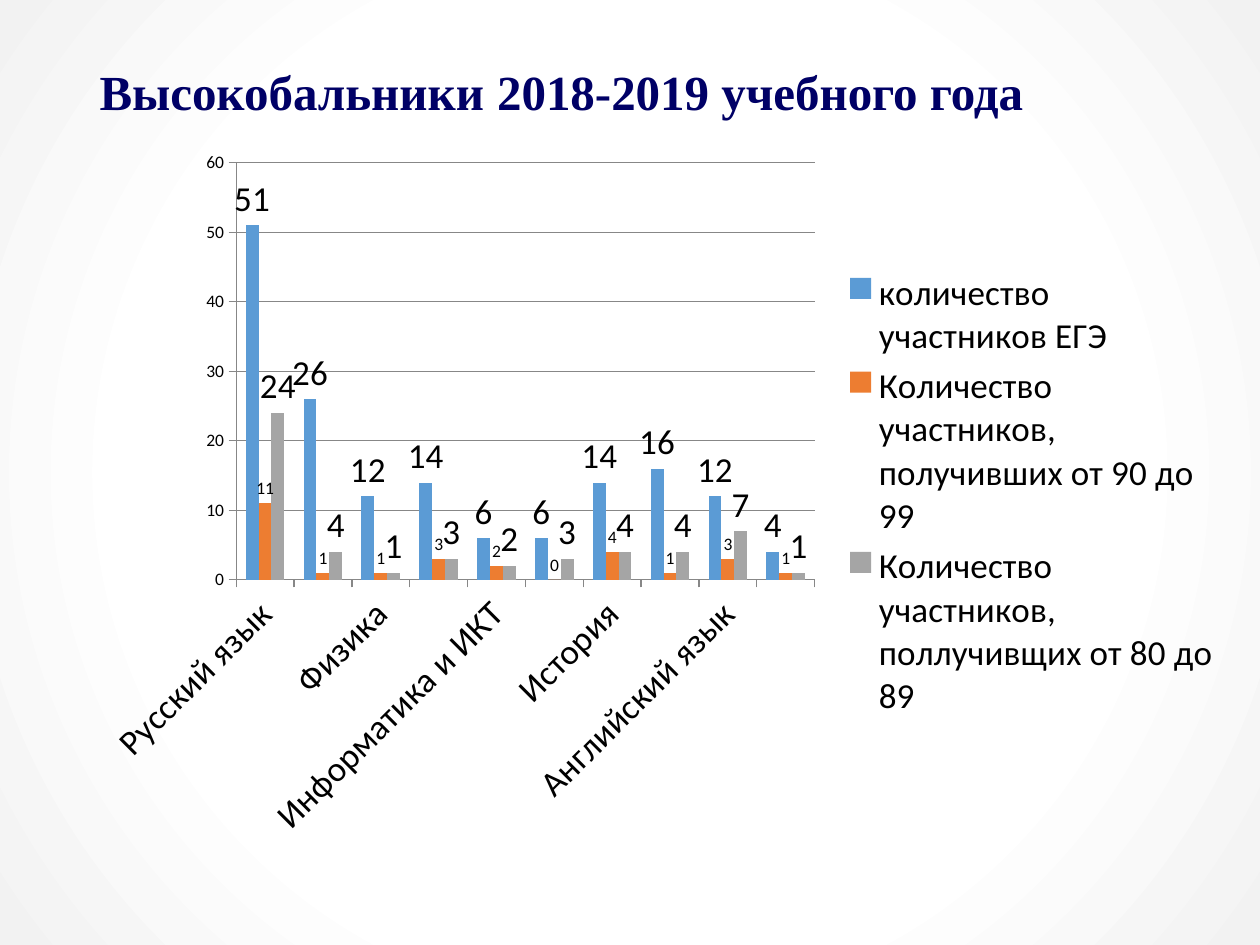
import pptx
import pptx.chart.data
import pptx.dml.color
import pptx.enum.chart
import pptx.enum.shapes
import pptx.enum.text
import pptx.oxml
import pptx.oxml.ns
import pptx.util
from pptx.util import Inches

TITLE_RUNS = [
    ("Высокобальники", 28, "Times New Roman", "000066", True),
    (" ", 33, "Calibri", "000000", False),
    ("2018-2019 учебного года", 28, "Times New Roman", "000066", True),
]
SUBJECTS = [
    "Русский язык", "Математика (профильная)", "Физика", "Химия",
    "Информатика и ИКТ", "Биология", "История", "Обществознание",
    "Английский язык", "Литература",
]
SERIES = [
    ("количество участников ЕГЭ",
     (51, 26, 12, 14, 6, 6, 14, 16, 12, 4), "5B9BD5", 20),
    ("Количество участников, получивших от 90 до 99",
     (11, 1, 1, 3, 2, 0, 4, 1, 3, 1), "ED7D31", 10),
    ("Количество участников, поллучивщих от 80 до 89",
     (24, 4, 1, 3, 2, 3, 4, 4, 7, 1), "A5A5A5", 20),
]
GRADIENT = (
    '<a:gradFill %s rotWithShape="1"><a:gsLst>'
    '<a:gs pos="63000"><a:srgbClr val="FFFFFF"/></a:gs>'
    '<a:gs pos="100000"><a:srgbClr val="F2F2F2"/></a:gs></a:gsLst>'
    '<a:path path="circle"><a:fillToRect l="50000" t="50000" r="50000" b="50000"/>'
    '</a:path></a:gradFill>' % pptx.oxml.ns.nsdecls("a")
)
PLOT_LAYOUT = (
    '<c:layout %s><c:manualLayout><c:layoutTarget val="inner"/>'
    '<c:xMode val="edge"/><c:yMode val="edge"/>'
    '<c:x val="0.13"/><c:y val="0.034"/><c:w val="0.504"/><c:h val="0.586"/>'
    '</c:manualLayout></c:layout>' % pptx.oxml.ns.nsdecls("c")
)


def paint(color_format, value):
    color_format.rgb = pptx.dml.color.RGBColor.from_string(value)


def style_font(font, size, name="Calibri", color="000000", bold=False):
    font.size = pptx.util.Pt(size)
    font.name = name
    font.bold = bold
    font.fill.solid()
    paint(font.fill.fore_color, color)


def style_line(line, color="878787"):
    line.fill.solid()
    paint(line.color, color)
    line.width = pptx.util.Pt(0.75)


def add_backdrop(page, deck):
    backdrop = page.shapes.add_shape(
        pptx.enum.shapes.MSO_SHAPE.RECTANGLE, 0, 0, deck.slide_width, deck.slide_height)
    backdrop.shadow.inherit = False
    backdrop.line.fill.background()
    backdrop.fill.background()
    properties = backdrop.element.spPr
    no_fill = properties.find(pptx.oxml.ns.qn("a:noFill"))
    properties.replace(no_fill, pptx.oxml.parse_xml(GRADIENT))
    page.shapes.element.insert(2, backdrop.element)


def add_title(page):
    title = page.shapes.title
    title.left, title.top = Inches(0.69), Inches(0.4)
    title.width, title.height = Inches(8.62), Inches(0.65)
    title.text_frame.word_wrap = True
    title.text_frame.vertical_anchor = pptx.enum.text.MSO_ANCHOR.MIDDLE
    para = title.text_frame.paragraphs[0]
    para.alignment = pptx.enum.text.PP_ALIGN.LEFT
    para.line_spacing = 0.9
    for text, size, name, color, bold in TITLE_RUNS:
        span = para.add_run()
        span.text = text
        style_font(span.font, size, name, color, bold)


def add_results_chart(page):
    data = pptx.chart.data.CategoryChartData()
    data.categories = SUBJECTS
    for name, values, _, _ in SERIES:
        data.add_series(name, values)
    chart = page.shapes.add_chart(
        pptx.enum.chart.XL_CHART_TYPE.COLUMN_CLUSTERED,
        Inches(0.69), Inches(1.1), Inches(9.11), Inches(5.65), data).chart
    style_font(chart.font, 10)
    chart.has_title = False
    chart.has_legend = True
    chart.legend.position = pptx.enum.chart.XL_LEGEND_POSITION.RIGHT
    chart.legend.include_in_layout = False
    style_font(chart.legend.font, 20)

    for axis, size in ((chart.category_axis, 20), (chart.value_axis, 10)):
        style_font(axis.tick_labels.font, size)
        axis.major_tick_mark = pptx.enum.chart.XL_TICK_MARK.OUTSIDE
        axis.minor_tick_mark = pptx.enum.chart.XL_TICK_MARK.NONE
        style_line(axis.format.line)
    subject_text = chart.category_axis._element.find(pptx.oxml.ns.qn("c:txPr"))
    subject_text.find(pptx.oxml.ns.qn("a:bodyPr")).set("rot", "-2700000")
    scale = chart.value_axis
    scale.minimum_scale, scale.maximum_scale, scale.major_unit = 0, 60, 10
    scale.has_major_gridlines = True
    style_line(scale.major_gridlines.format.line)

    plot = chart.plots[0]
    plot.gap_width = 150
    plot.overlap = 0
    plot.vary_by_categories = False
    for series, (_, _, color, label_size) in zip(plot.series, SERIES):
        series.format.fill.solid()
        paint(series.format.fill.fore_color, color)
        labels = series.data_labels
        labels.show_value = True
        labels.position = pptx.enum.chart.XL_LABEL_POSITION.OUTSIDE_END
        style_font(labels.font, label_size)

    plot_area = chart._chartSpace.chart.plotArea
    for layout in plot_area.findall(pptx.oxml.ns.qn("c:layout")):
        plot_area.remove(layout)
    plot_area.insert(0, pptx.oxml.parse_xml(PLOT_LAYOUT))


def main():
    deck = pptx.Presentation()
    deck.slide_width, deck.slide_height = Inches(10), Inches(7.5)
    page = deck.slides.add_slide(deck.slide_layouts[5])
    add_backdrop(page, deck)
    add_title(page)
    add_results_chart(page)
    deck.save("out.pptx")


if __name__ == "__main__":
    main()
